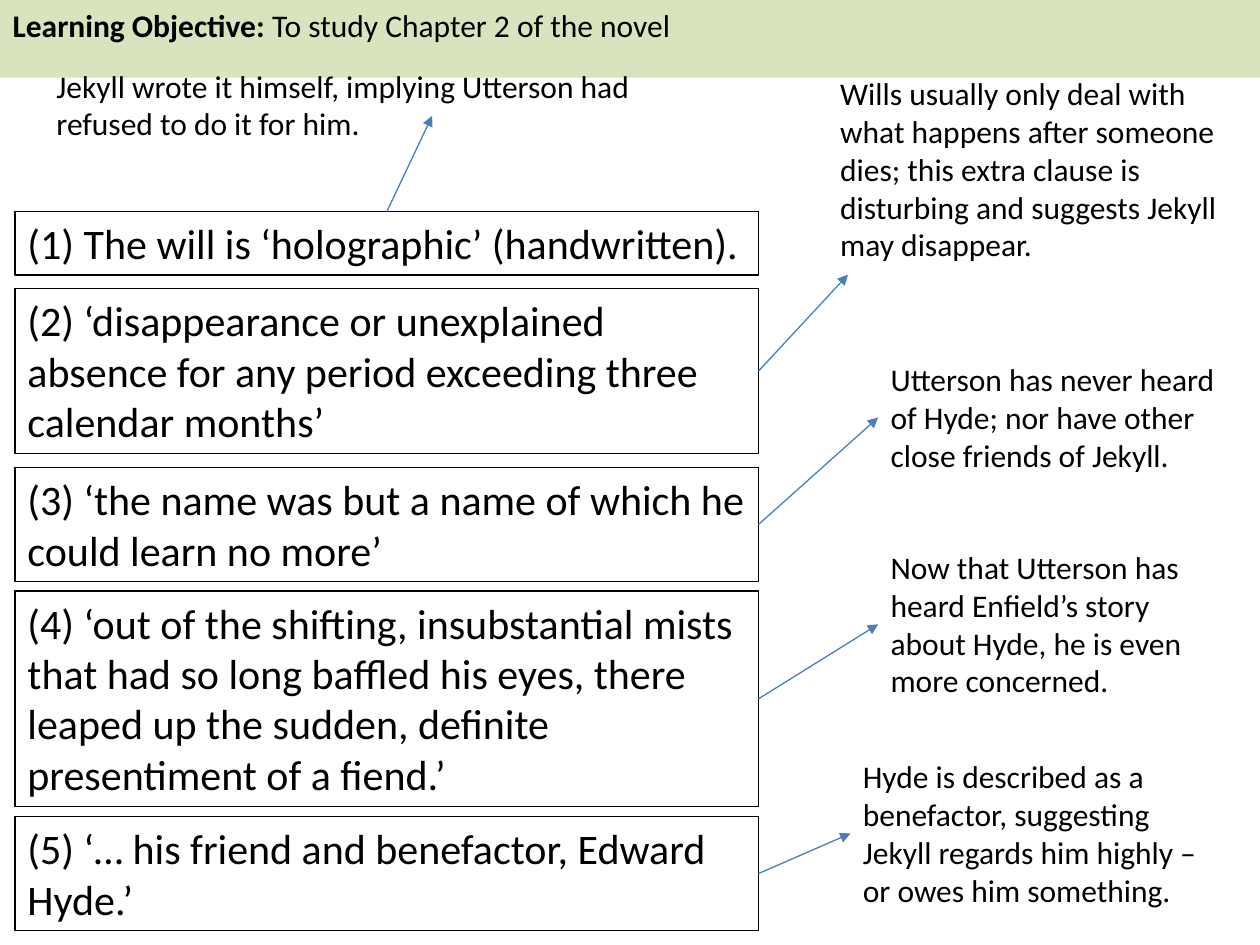
"""Build a study slide pairing numbered quotations with linked notes."""
from dataclasses import dataclass
from typing import Optional

from lxml import etree
from pptx import Presentation
from pptx.dml.color import RGBColor
from pptx.enum.shapes import MSO_CONNECTOR
from pptx.enum.text import MSO_ANCHOR, MSO_AUTO_SIZE, PP_ALIGN
from pptx.oxml.ns import qn
from pptx.util import Inches, Pt

STRAIGHT = MSO_CONNECTOR.STRAIGHT
TOP, MIDDLE = MSO_ANCHOR.TOP, MSO_ANCHOR.MIDDLE
GROW = MSO_AUTO_SIZE.SHAPE_TO_FIT_TEXT
LEFT = PP_ALIGN.LEFT

COLS, ROWS = 100, 75
CELL = Inches(0.1)
PADDING = 1
LEADING = 1.21
CARD_LEFT, CARD_WIDTH = 1.2, 59


@dataclass(frozen=True)
class Theme:
    font: str = "Calibri"
    text: RGBColor = RGBColor(0x00, 0x00, 0x00)
    banner: RGBColor = RGBColor(0xD7, 0xE4, 0xBD)
    arrow: RGBColor = RGBColor(0x4B, 0x7E, 0xBC)
    quote_size: int = 24
    note_size: int = 18
    line_width: float = 0.75


@dataclass(frozen=True)
class Box:
    x: float
    y: float
    w: float
    lines: int
    size: int

    @property
    def h(self) -> float:
        return self.lines * self.size * LEADING / 7.2 + PADDING

    @property
    def top(self) -> tuple[float, float]:
        return self.x + self.w / 2, self.y

    @property
    def left(self) -> tuple[float, float]:
        return self.x, self.y + self.h / 2

    @property
    def right(self) -> tuple[float, float]:
        return self.x + self.w, self.y + self.h / 2


@dataclass(frozen=True)
class Pair:
    quote: str
    quote_y: float
    quote_lines: int
    note: str
    note_x: float
    note_y: float
    note_w: float
    note_lines: int
    tip: Optional[tuple[float, float]] = None
    from_top: bool = False


THEME = Theme()
PAIRS = [
    Pair("(1) The will is ‘holographic’ (handwritten).", 16.8, 1,
         "Jekyll wrote it himself, implying Utterson had refused to do it for him.",
         3.5, 4.8, 49.6, 2, tip=(34.3, 9.2), from_top=True),
    Pair("(2) ‘disappearance or unexplained absence for any period exceeding "
         "three calendar months’", 22.9, 3,
         "Wills usually only deal with what happens after someone dies; this extra "
         "clause is disturbing and suggests Jekyll may disappear.",
         65.7, 5.4, 33.9, 5, tip=(67.3, 21.8)),
    Pair("(3) ‘the name was but a name of which he could learn no more’", 37.1, 2,
         "Utterson has never heard of Hyde; nor have other close friends of Jekyll.",
         69.7, 28.1, 29.1, 3),
    Pair("(4) ‘out of the shifting, insubstantial mists that had so long baffled his "
         "eyes, there leaped up the sudden, definite presentiment of a fiend.’", 46.9, 4,
         "Now that Utterson has heard Enfield’s story about Hyde, he is even more concerned.",
         69.7, 43, 27.6, 4),
    Pair("(5) ‘… his friend and benefactor, Edward Hyde.’", 64.8, 2,
         "Hyde is described as a benefactor, suggesting Jekyll regards him highly – "
         "or owes him something.",
         67.5, 59.6, 30.7, 4),
]


def grid(*cells: float) -> list[int]:
    return [round(c * CELL) for c in cells]


def add_run(p, text: str, *, size: int, bold: bool = False) -> None:
    r = p.add_run()
    r.text = text
    r.font.name = THEME.font
    r.font.size = Pt(size)
    r.font.bold = bold
    r.font.color.rgb = THEME.text


def add_text(slide, box: Box, text: str, *, outlined: bool = False) -> None:
    sp = slide.shapes.add_textbox(*grid(box.x, box.y, box.w, box.h))
    if outlined:
        sp.line.color.rgb = THEME.text
        sp.line.width = Pt(THEME.line_width)
    tf = sp.text_frame
    tf.word_wrap = True
    tf.auto_size = GROW
    tf.vertical_anchor = TOP
    add_run(tf.paragraphs[0], text, size=box.size)


def add_arrow(slide, start: tuple[float, float], end: tuple[float, float]) -> None:
    sp = slide.shapes.add_connector(STRAIGHT, *grid(*start, *end))
    sp.line.color.rgb = THEME.arrow
    sp.line.width = Pt(THEME.line_width)
    etree.SubElement(sp.get_or_add_ln(), qn("a:tailEnd"), type="triangle")
    etree.SubElement(sp.line.fill._xPr.getparent(), qn("a:effectLst"))


def add_banner(slide) -> None:
    sp = slide.shapes.title
    sp.left, sp.top, sp.width, sp.height = grid(0, 0, COLS, 4)
    sp.fill.solid()
    sp.fill.fore_color.rgb = THEME.banner
    tf = sp.text_frame
    tf.word_wrap = True
    tf.auto_size = GROW
    tf.vertical_anchor = MIDDLE
    p = tf.paragraphs[0]
    p.alignment = LEFT
    add_run(p, "Learning Objective: ", size=THEME.note_size, bold=True)
    add_run(p, "To study Chapter 2 of the novel", size=THEME.note_size)


def add_pair(slide, pair: Pair) -> None:
    card = Box(CARD_LEFT, pair.quote_y, CARD_WIDTH, pair.quote_lines, THEME.quote_size)
    note = Box(pair.note_x, pair.note_y, pair.note_w, pair.note_lines, THEME.note_size)
    add_text(slide, card, pair.quote, outlined=True)
    add_text(slide, note, pair.note)
    add_arrow(slide, card.top if pair.from_top else card.right, pair.tip or note.left)


def main() -> None:
    prs = Presentation()
    prs.slide_width, prs.slide_height = grid(COLS, ROWS)
    slide = prs.slides.add_slide(prs.slide_layouts[5])
    add_banner(slide)
    for pair in PAIRS:
        add_pair(slide, pair)
    prs.save("out.pptx")


if __name__ == "__main__":
    main()
